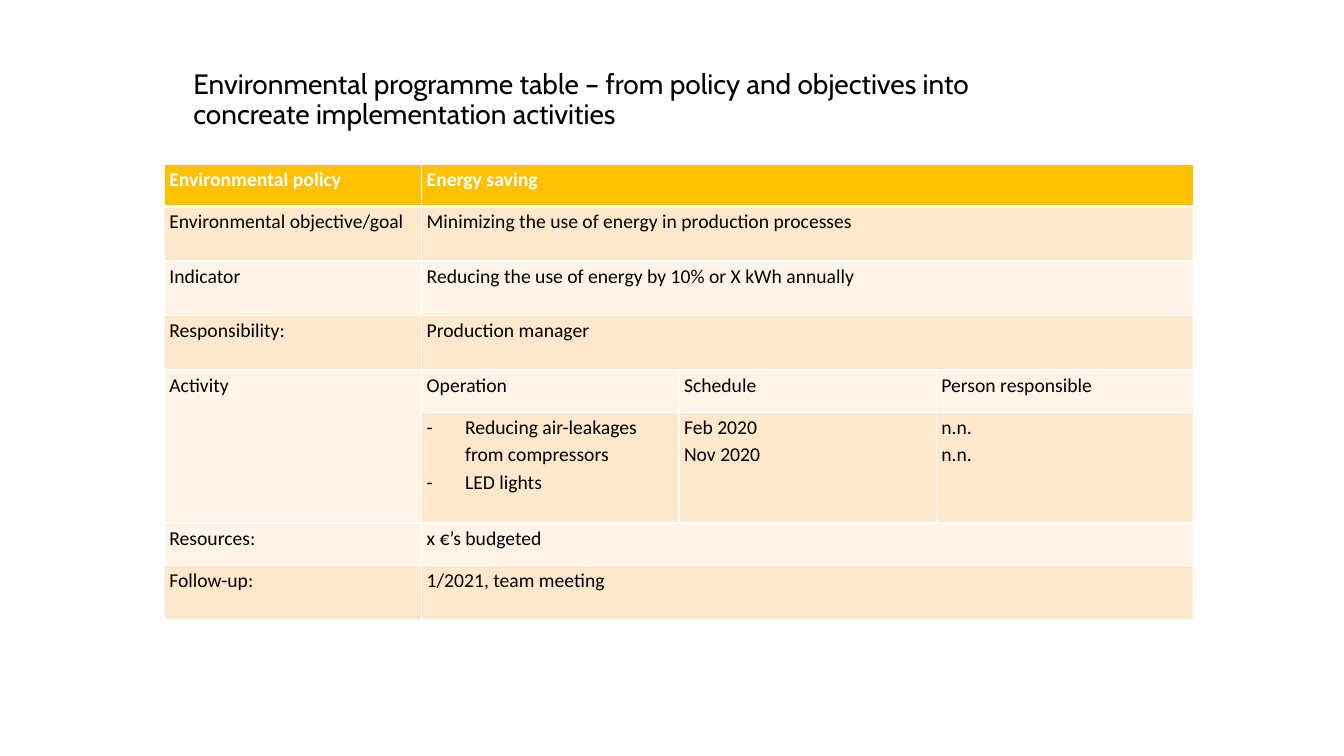
from lxml import etree
from pptx import Presentation
from pptx.dml.color import RGBColor
from pptx.enum import text
from pptx.oxml.ns import qn
from pptx.util import Inches, Pt

BLACK = RGBColor(0, 0, 0)
WHITE = RGBColor(0xFF, 0xFF, 0xFF)
GOLD = RGBColor(0xFF, 0xC0, 0x00)
PEACH = RGBColor(0xFF, 0xE8, 0xCC)
CREAM = RGBColor(0xFF, 0xF4, 0xE7)

TITLE = ("Environmental programme table – from policy and objectives "
         "into concreate implementation activities")
# Each row: height, then its cells; a row of two cells spans the value columns.
PROGRAMME = [
    (0.42, ["Environmental policy", "Energy saving"]),
    (0.54, ["Environmental objective/goal",
            "Minimizing the use of energy in production processes"]),
    (0.54, ["Indicator", "Reducing the use of energy by 10% or X kWh annually"]),
    (0.54, ["Responsibility:", "Production manager"]),
    (0.42, ["Activity", "Operation", "Schedule", "Person responsible"]),
    (1.1, ["", "- Reducing air-leakages from compressors\n- LED lights",
           "Feb 2020\nNov 2020", "n.n.\nn.n."]),
    (0.42, ["Resources:", "x €’s budgeted"]),
    (0.54, ["Follow-up:", "1/2021, team meeting"]),
]
COLUMNS = 4
ACTIVITY_ROW = 4


def add_title(slide, left, top, width, height):
    frame = slide.shapes.add_textbox(left, top, width, height).text_frame
    frame.word_wrap = True
    frame.vertical_anchor = text.MSO_ANCHOR.MIDDLE
    heading = frame.paragraphs[0]
    heading.text = TITLE
    heading.line_spacing = 0.9
    heading.font.name = "Cabin"
    heading.font.size = Pt(20)
    heading.font.color.rgb = BLACK


def set_borders(cell, bottom_width):
    properties = cell._tc.get_or_add_tcPr()
    for place, side in enumerate(("lnL", "lnR", "lnT", "lnB")):
        width = bottom_width if side == "lnB" else 1
        line = etree.Element(qn(f"a:{side}"), w=str(Pt(width)))
        fill = etree.SubElement(line, qn("a:solidFill"))
        etree.SubElement(fill, qn("a:srgbClr"), val=str(WHITE))
        properties.insert(place, line)


def add_dash(paragraph):
    properties = paragraph._p.get_or_add_pPr()
    indent = Inches(0.38)
    properties.set("marL", str(indent))
    properties.set("indent", str(-indent))
    etree.SubElement(properties, qn("a:buFont"), typeface="Calibri")
    etree.SubElement(properties, qn("a:buChar"), char="-")


def fill_cell(cell, content, color, is_header):
    cell.fill.solid()
    cell.fill.fore_color.rgb = color
    cell.margin_left = cell.margin_right = Inches(0.05)
    cell.margin_top = cell.margin_bottom = 0
    set_borders(cell, 3 if is_header else 1)
    frame = cell.text_frame
    for index, entry in enumerate(content.split("\n")):
        paragraph = frame.add_paragraph() if index else frame.paragraphs[0]
        paragraph.text = entry.removeprefix("- ")
        paragraph.line_spacing = 1.15
        if entry.startswith("- "):
            add_dash(paragraph)
        paragraph.font.name = "Calibri"
        paragraph.font.size = Pt(14)
        paragraph.font.bold = is_header
        paragraph.font.color.rgb = WHITE if is_header else BLACK


def add_programme(slide, left, top, width, height):
    table = slide.shapes.add_table(
        len(PROGRAMME), COLUMNS, left, top, width, height).table
    table.first_row = table.horz_banding = False
    for column in table.columns:
        column.width = width // COLUMNS
    for row, (row_height, contents) in enumerate(PROGRAMME):
        table.rows[row].height = Inches(row_height)
        is_header = row == 0
        band = GOLD if is_header else (PEACH if row % 2 else CREAM)
        for column in range(COLUMNS):
            content = contents[column] if column < len(contents) else ""
            in_activity = column == 0 and row == ACTIVITY_ROW + 1
            fill_cell(table.cell(row, column), content,
                      CREAM if in_activity else band, is_header)
        if len(contents) == 2:
            table.cell(row, 1).merge(table.cell(row, COLUMNS - 1))
    table.cell(ACTIVITY_ROW, 0).merge(table.cell(ACTIVITY_ROW + 1, 0))


def main():
    deck = Presentation()
    deck.slide_width = Inches(13.33)
    deck.slide_height = Inches(7.5)
    slide = deck.slides.add_slide(deck.slide_layouts[6])
    add_title(slide, Inches(1.82), Inches(0.45), Inches(7.98), Inches(1.09))
    add_programme(slide, Inches(1.63), Inches(1.63), Inches(10.21), Inches(4.52))
    deck.save("out.pptx")


if __name__ == "__main__":
    main()
